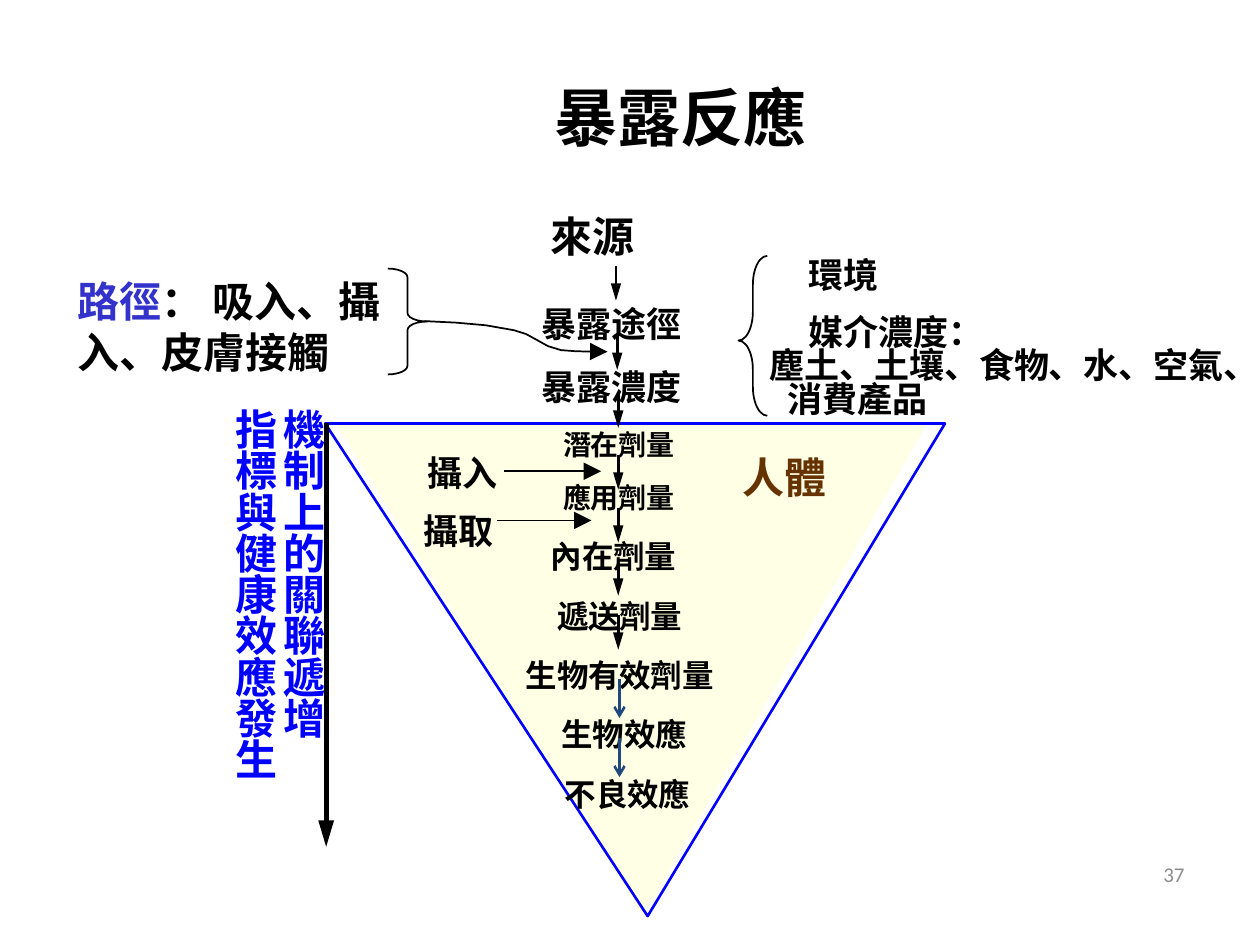
from collections import namedtuple
from dataclasses import dataclass

from lxml import etree
from pptx import Presentation
from pptx.dml.color import RGBColor
from pptx.enum import shapes, text
from pptx.oxml import ns
from pptx.util import Pt

Box = namedtuple("Box", "x y w h")
ALIGN = text.PP_ALIGN


@dataclass(frozen=True)
class Theme:
    cjk: str = "Noto Sans CJK SC"
    latin: str = "Calibri"
    black: str = "000000"
    blue: str = "0000FF"
    indigo: str = "3333CC"
    navy: str = "1F497D"
    brown: str = "663300"
    grey: str = "8C8C8C"
    cream: str = "FFFF99"
    title: int = 36
    head: int = 24
    body: int = 20
    step: int = 18
    small: int = 16
    note: int = 12


T = Theme()


def child(parent, tag, **attrs):
    return etree.SubElement(parent, ns.qn(tag), attrs)


def add_run(p, words, size, color=T.black, font=T.cjk, bold=True, spc=-10):
    r = p.add_run()
    r.text = words
    for key, value in {"size": Pt(size), "bold": bold, "name": font}.items():
        setattr(r.font, key, value)
    r.font.color.rgb = RGBColor.from_string(color)
    rPr = r._r.get_or_add_rPr()
    rPr.set("spc", str(spc))
    child(rPr, "a:ea", typeface=font)


def add_text(s, box, lines, size, pitch=None, align=ALIGN.LEFT, inset=0,
             anchor=text.MSO_ANCHOR.TOP, **run):
    tf = s.shapes.add_textbox(*map(Pt, box)).text_frame
    margins = {f"margin_{side}": Pt(inset) for side in ("left", "right", "top", "bottom")}
    for key, value in {**margins, "word_wrap": True, "vertical_anchor": anchor}.items():
        setattr(tf, key, value)
    for i, line in enumerate(lines):
        p = tf.add_paragraph() if i else tf.paragraphs[0]
        p.alignment = align
        if pitch:
            p.line_spacing = Pt(pitch)
        add_run(p, line, size, **run)
    return tf


def add_label(s, x, y, w, words, size, **run):
    return add_text(s, Box(x, y, w, size * 1.25), [words], size, size * 1.25, **run)


def indent(p, left=0, right=0):
    pPr = p._p.get_or_add_pPr()
    pPr.set("marL", str(Pt(left)))
    pPr.set("marR", str(Pt(right)))


def add_head(sp, kind="triangle", breadth="med", length="lg"):
    child(sp.line._get_or_add_ln(), "a:tailEnd", type=kind, w=breadth, len=length)


def set_line(sp, color, width):
    sp.line.color.rgb = RGBColor.from_string(color)
    sp.line.width = Pt(width)


def add_arrow(s, x1, y1, x2, y2, width=1.5, color=T.black, **head):
    sp = s.shapes.add_connector(shapes.MSO_CONNECTOR.STRAIGHT, *map(Pt, (x1, y1, x2, y2)))
    set_line(sp, color, width)
    add_head(sp, **head)
    child(sp._element.spPr, "a:effectLst")


def add_outline(s, points, closed):
    points = [(Pt(x), Pt(y)) for x, y in points]
    fb = s.shapes.build_freeform(*points[0])
    fb.add_line_segments(points[1:], close=closed)
    sp = fb.convert_to_shape()
    sp.shadow.inherit = False
    sp.fill.background()
    return sp


def add_brace(s, kind, box, curl, middle):
    sp = s.shapes.add_shape(kind, *map(Pt, box))
    sp.shadow.inherit = False
    sp.fill.background()
    set_line(sp, T.black, 1)
    sp.adjustments[0], sp.adjustments[1] = curl, middle


def add_body(s, box):
    x, y, w, h = box
    inner = add_outline(s, [(x + w - 10, y), (x + 6, y), (x + 181.5, y + h)], True)
    inner.fill.solid()
    inner.fill.fore_color.rgb = RGBColor.from_string(T.cream)
    child(inner._element.spPr.find(".//" + ns.qn("a:srgbClr")), "a:alpha", val="25000")
    inner.line.fill.background()
    outer = add_outline(s, [(x, y), (x + 184.3, y + h), (x + w, y)], True)
    set_line(outer, T.blue, 1.5)
    add_label(s, x + 238.3, y + 15, 52, "人體", T.head, color=T.brown, spc=0)


def add_routes(s, box):
    x, y, w, h = box
    tf = add_text(s, Box(x, y + 2, 191, 58), ["路徑"], T.head, 29, color=T.indigo)
    add_run(tf.paragraphs[0], "： 吸入、攝入、皮膚接觸", T.head)
    add_brace(s, shapes.MSO_SHAPE.RIGHT_BRACE, Box(x + 177, y - 2, 22.5, h), 0.22, 0.5)
    offsets = [(198, 28), (216, 28.9), (233, 30.4), (249, 33.2), (256, 35.4),
               (263.5, 39.5), (268.5, 42.3), (276, 44.6), (285, 45.3), (302.5, 45.5)]
    curve = add_outline(s, [(x + dx, y + dy) for dx, dy in offsets], False)
    set_line(curve, T.black, 1)
    add_head(curve, breadth="lg")


def add_media(s, box):
    x, y, w, h = box
    add_brace(s, shapes.MSO_SHAPE.LEFT_BRACE, Box(x, y, 16.5, h), 1, 0.53)
    lines = ["環境", "媒介濃度：", "塵土、土壤、食物、水、空氣、", "消費產品"]
    tf = add_text(s, Box(x + 18, y - 10, w - 18, 104), lines, T.body)
    for p, left, pitch in zip(tf.paragraphs, (22.3, 22.3, 0, 10), (32.5, 32.5, 19.3, 19.3)):
        indent(p, left)
        p.line_spacing = Pt(pitch)


def add_chain(s, box):
    x, y, w, h = box
    steps = [("來源", 16.6, 0, T.head), ("暴露途徑", 11.6, 52.6, T.body),
             ("暴露濃度", 11.6, 88.6, T.body), ("潛在劑量", 23.8, 124.6, T.small),
             ("應用劑量", 23.8, 154.9, T.small)]
    for words, dx, dy, size in steps:
        add_label(s, x + dx, y + dy + 1, 90, words, size)
    doses = ["內在劑量", "遞送劑量", "生物有效劑量", "生物效應", "不良效應"]
    tf = add_text(s, Box(x, y + 176.5, w, 170), doses, T.step, 34, ALIGN.CENTER)
    for p, left, right in zip(tf.paragraphs, (0, 0, 0, 5, 9), (7, 0, 0, 0, 0)):
        indent(p, left, right)
    axis = x + 55.3
    for dx, dy in [(-1.3, 33.8), (-0.6, 73.4), (0, 106.5), (0, 141.8),
                   (0, 172.1), (0, 202.4), (0, 233.3)]:
        add_arrow(s, axis + dx, y + dy, axis + dx, y + dy + 20)
    for dy in (270, 303.8):
        add_arrow(s, x + 56, y + dy, x + 56, y + dy + 22.3,
                  color=T.navy, kind="arrow", length="med")


def add_intake(s, box):
    x, y, w, h = box
    tf = add_text(s, Box(x, y, 53, h), ["攝入", "攝取"], T.body, 33)
    indent(tf.paragraphs[0], 2.5)
    for x1, x2, dy in ((46, 101.5, 20.3), (42, 96, 48.4)):
        add_arrow(s, x + x1, y + dy, x + x2, y + dy, 1, breadth="lg")


def add_trend(s, box):
    x, y, w, h = box
    tf = add_text(s, Box(x, y, w, 250), ["機制上的關聯遞增", "指標與健康效應發生"],
                  T.head, 27.4, color=T.blue, spc=-40)
    tf._txBody.bodyPr.set("vert", "eaVert")
    add_arrow(s, x + 55.4, y + 8.6, x + 55.4, y + h, 3)


def main():
    prs = Presentation()
    prs.slide_width, prs.slide_height = Pt(720), Pt(540)
    s = prs.slides.add_slide(prs.slide_layouts[6])
    add_body(s, Box(185.8, 242, 354.2, 281.5))
    add_routes(s, Box(44.6, 155.5, 305, 60.5))
    add_chain(s, Box(298, 118, 112.3, 347))
    add_intake(s, Box(242, 249, 104, 66))
    add_media(s, Box(422, 146.2, 298, 91.4))
    add_trend(s, Box(131, 233.4, 55, 250.5))
    middle = text.MSO_ANCHOR.MIDDLE
    add_text(s, Box(93.6, 21.6, 590.4, 90), ["暴露反應"], T.title, None,
             ALIGN.CENTER, 4, middle, spc=0)
    add_text(s, Box(516, 485.3, 168, 28.8), ["37"], T.note, None, ALIGN.RIGHT, 7.2,
             middle, color=T.grey, font=T.latin, bold=False, spc=0)
    prs.save("out.pptx")


if __name__ == "__main__":
    main()
